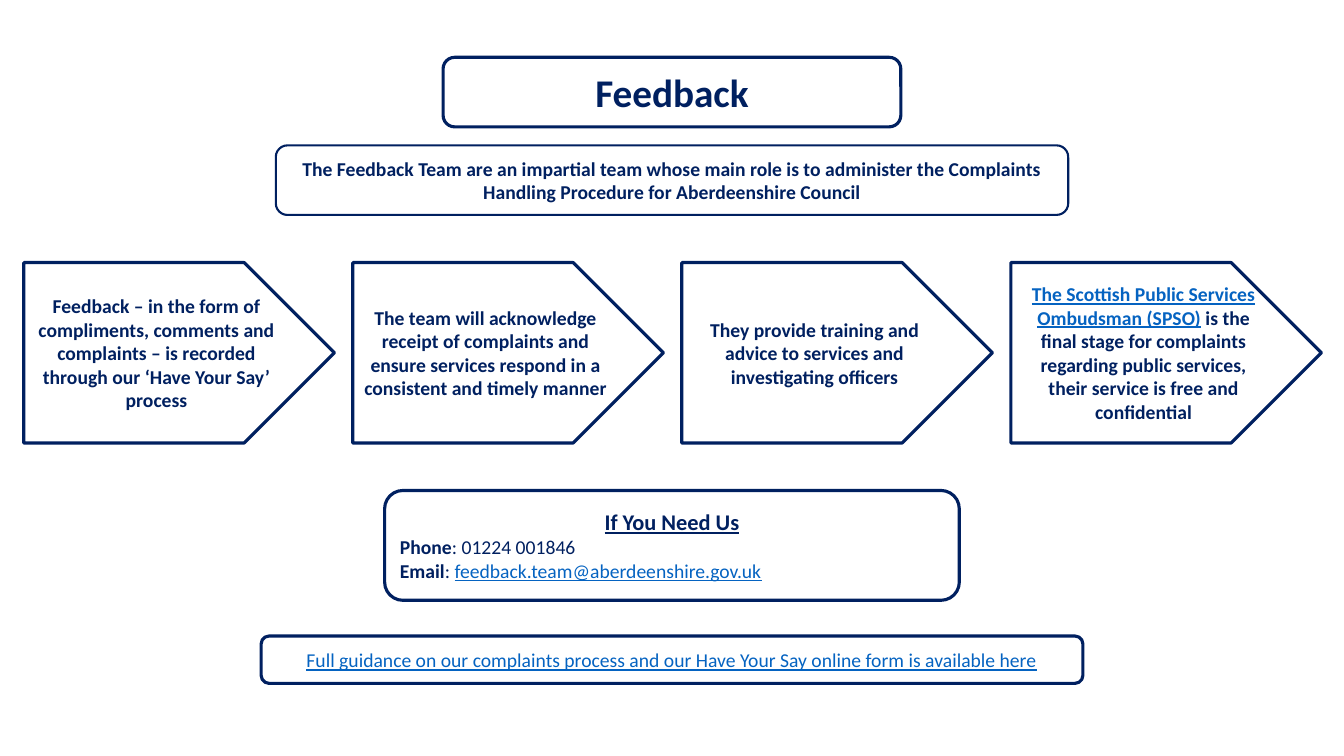
from pptx import Presentation
from pptx import util as u
from pptx.dml.color import RGBColor
from pptx.enum import shapes, text

WIDTH, HEIGHT = u.Inches(13.33), u.Inches(7.5)
NAVY, LINK = "002060", "0563C1"
CENTER, LEFT = text.PP_ALIGN.CENTER, text.PP_ALIGN.LEFT
ROUNDED = shapes.MSO_SHAPE.ROUNDED_RECTANGLE
SOFT_BOX = shapes.MSO_SHAPE.FLOWCHART_ALTERNATE_PROCESS
ARROW = shapes.MSO_SHAPE.PENTAGON

PLAIN = {"name": "Calibri", "size": u.Pt(14), "bold": False, "underline": False}
BOLD = PLAIN | {"bold": True}
LINKED = PLAIN | {"underline": True}
BOLD_LINKED = BOLD | {"underline": True}
TITLE = BOLD | {"size": u.Pt(28)}
HEADING = BOLD_LINKED | {"size": u.Pt(16)}

STEP_LEFT, STEP_PITCH, STEP_TOP = 1.77, 24.48, 34.73
STEP_WIDTH, STEP_HEIGHT = 23.11, 23.87
STEPS = [
    [("Feedback – in the form of compliments, comments and complaints – is recorded "
      "through our ‘Have Your Say’ process", BOLD, NAVY)],
    [("The team will acknowledge receipt of complaints and ensure services respond "
      "in a consistent and timely manner", BOLD, NAVY)],
    [("They provide training and advice to services and investigating officers", BOLD, NAVY)],
    [("The Scottish Public Services Ombudsman (SPSO)", BOLD_LINKED, LINK),
     (" is the final stage for complaints regarding public services, their service "
      "is free and confidential", BOLD, NAVY)],
]
INTRO = [("The Feedback Team are an impartial team whose main role is to administer "
          "the Complaints Handling Procedure for Aberdeenshire Council", BOLD, NAVY)]
CONTACT = [
    (CENTER, [("If You Need Us", HEADING, NAVY)]),
    (LEFT, [("Phone", BOLD, NAVY), (": 01224 001846", PLAIN, NAVY)]),
    (LEFT, [("Email", BOLD, NAVY), (": ", PLAIN, NAVY),
            ("feedback.team@aberdeenshire.gov.uk", LINKED, LINK)]),
]
GUIDANCE = [("Full guidance on our complaints process and our Have Your Say online form "
             "is available here", LINKED, LINK)]


def paint(color_format, hex_color):
    color_format.rgb = RGBColor.from_string(hex_color)


def apply(target, values):
    for key, value in values.items():
        setattr(target, key, value)


def place(left, top, width, height):
    return {"left": int(WIDTH * left / 100), "top": int(HEIGHT * top / 100),
            "width": int(WIDTH * width / 100), "height": int(HEIGHT * height / 100)}


def centered(top, width, height):
    return place((100 - width) / 2, top, width, height)


def write(panel, paragraphs):
    frame = panel.text_frame
    apply(frame, {"word_wrap": True, "vertical_anchor": text.MSO_ANCHOR.MIDDLE,
                  "auto_size": text.MSO_AUTO_SIZE.NONE})
    for index, (alignment, pieces) in enumerate(paragraphs):
        paragraph = frame.add_paragraph() if index else frame.paragraphs[0]
        apply(paragraph, {"alignment": alignment, "line_spacing": 1.0,
                          "space_before": u.Pt(0)})
        for words, style, color in pieces:
            run = paragraph.add_run()
            run.text = words
            apply(run.font, style)
            paint(run.font.color, color)


def add_panel(slide, kind, box, paragraphs=(), weight=2.25):
    panel = slide.shapes.add_shape(kind, **box)
    panel.shadow.inherit = False
    panel.fill.background()
    paint(panel.line.color, NAVY)
    panel.line.width = u.Pt(weight)
    write(panel, paragraphs)


def add_title(slide, box, words):
    add_panel(slide, ROUNDED, box)
    title = slide.shapes.title
    apply(title, box)
    write(title, [(CENTER, [(words, TITLE, NAVY)])])


def add_steps(slide):
    for column, step in enumerate(STEPS):
        box = place(STEP_LEFT + column * STEP_PITCH, STEP_TOP, STEP_WIDTH, STEP_HEIGHT)
        add_panel(slide, ARROW, box, [(CENTER, step)])


def main():
    deck = Presentation()
    apply(deck, {"slide_width": WIDTH, "slide_height": HEIGHT})
    slide = deck.slides.add_slide(deck.slide_layouts.get_by_name("Title Only"))
    add_title(slide, centered(7.58, 34.06, 9.2), "Feedback")
    add_panel(slide, SOFT_BOX, centered(19.23, 58.96, 9.2), [(CENTER, INTRO)], 1.5)
    add_steps(slide)
    add_panel(slide, SOFT_BOX, centered(84.13, 61.14, 6.27), [(CENTER, GUIDANCE)])
    add_panel(slide, ROUNDED, centered(64.88, 42.76, 14.53), CONTACT)
    deck.save("out.pptx")


if __name__ == "__main__":
    main()
